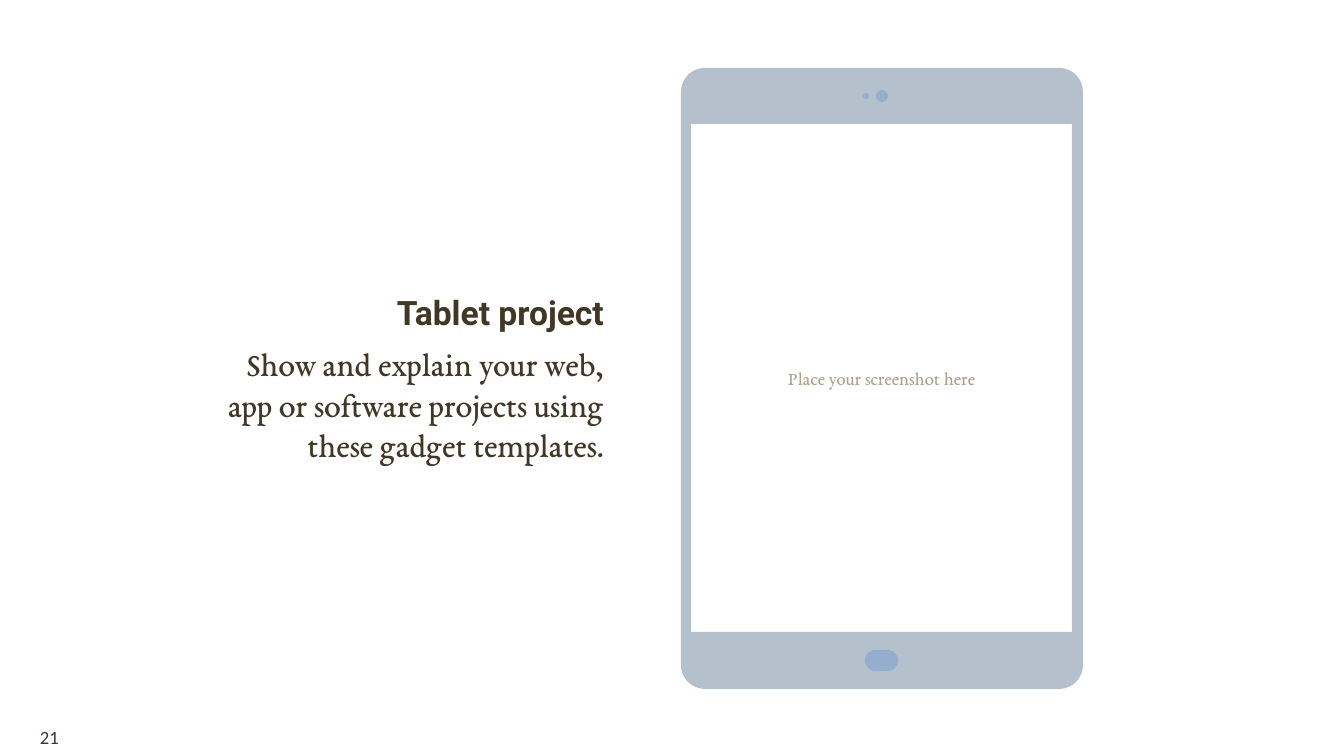
from math import cos, pi, sin

from pptx import Presentation
from pptx.dml.color import RGBColor
from pptx.enum.shapes import MSO_SHAPE
from pptx.enum.text import MSO_ANCHOR, PP_ALIGN
from pptx.util import Emu, Pt

PX = 9144000 / 1344
INK = RGBColor(0x41, 0x37, 0x24)
HINT = RGBColor(0xB0, 0xA4, 0x91)
CASE = RGBColor(0xB4, 0xC0, 0xCC)
BUTTON = RGBColor(0x95, 0xAE, 0xCD)

CORNER_STEPS = 16


def px(length):
    return Emu(round(length * PX))


def paint(shape, color):
    shape.shadow.inherit = False
    shape.fill.solid()
    shape.fill.fore_color.rgb = color
    shape.line.fill.background()


def add_box(slide, left, top, width, height, inset=0):
    box = slide.shapes.add_textbox(px(left), px(top), px(width), px(height))
    frame = box.text_frame
    frame.word_wrap = True
    frame.vertical_anchor = MSO_ANCHOR.MIDDLE
    frame.margin_left = frame.margin_right = px(inset)
    frame.margin_top = frame.margin_bottom = px(inset)
    return frame


def write(paragraph, text, font, size, color=INK, bold=False,
          align=PP_ALIGN.LEFT, before=0):
    paragraph.alignment = align
    paragraph.space_before = Pt(before)
    run = paragraph.add_run()
    run.text = text
    run.font.name = font
    run.font.size = Pt(size)
    run.font.bold = bold
    run.font.color.rgb = color


def rounded_outline(left, top, right, bottom, radius):
    """Points of a rounded rectangle, clockwise from the left side."""
    centers = [
        (left + radius, top + radius),
        (right - radius, top + radius),
        (right - radius, bottom - radius),
        (left + radius, bottom - radius),
    ]
    points = []
    for quarter, (x, y) in enumerate(centers, start=2):
        for step in range(CORNER_STEPS + 1):
            angle = (quarter + step / CORNER_STEPS) * pi / 2
            points.append((px(x + radius * cos(angle)),
                           px(y + radius * sin(angle))))
    return points


def add_case(shapes):
    """Tablet case with the screen cut out of it."""
    outline = rounded_outline(681, 68, 1083, 689, 24)
    screen = [(px(x), px(y)) for x, y in
              [(691, 124), (691, 632), (1072, 632), (1072, 124)]]
    builder = shapes.build_freeform(*outline[0], scale=1.0)
    builder.add_line_segments(outline[1:], close=True)
    builder.move_to(*screen[0])
    builder.add_line_segments(screen[1:], close=True)
    paint(builder.convert_to_shape(), CASE)


def add_button(shapes, kind, left, top, width, height):
    button = shapes.add_shape(kind, px(left), px(top), px(width), px(height))
    paint(button, BUTTON)
    return button


def main():
    prs = Presentation()
    prs.slide_width, prs.slide_height = px(1344), px(756)
    slide = prs.slides.add_slide(prs.slide_layouts[6])

    # Screen hint and page number
    hint = add_box(slide, 691, 126, 381, 505, inset=13)
    write(hint.paragraphs[0], "Place your screenshot here", "EB Garamond", 10,
          color=HINT, align=PP_ALIGN.CENTER)
    page_number = add_box(slide, 40, 718, 1266, 38)
    write(page_number.paragraphs[0], "21", "Calibri", 10)

    # Tablet
    tablet = slide.shapes.add_group_shape().shapes
    add_case(tablet)
    home = add_button(tablet, MSO_SHAPE.ROUNDED_RECTANGLE, 865, 650, 33, 21)
    home.adjustments[0] = 0.5
    add_button(tablet, MSO_SHAPE.OVAL, 863, 93, 6, 6)
    add_button(tablet, MSO_SHAPE.OVAL, 876, 90, 12, 12)

    # Project description
    project = add_box(slide, 224, 38, 380, 680)
    write(project.paragraphs[0], "Tablet project", "Roboto", 18, bold=True,
          align=PP_ALIGN.RIGHT)
    write(project.add_paragraph(),
          "Show and explain your web, app or software projects using "
          "these gadget templates.",
          "EB Garamond", 18, align=PP_ALIGN.RIGHT, before=6)

    prs.save("out.pptx")


if __name__ == "__main__":
    main()
